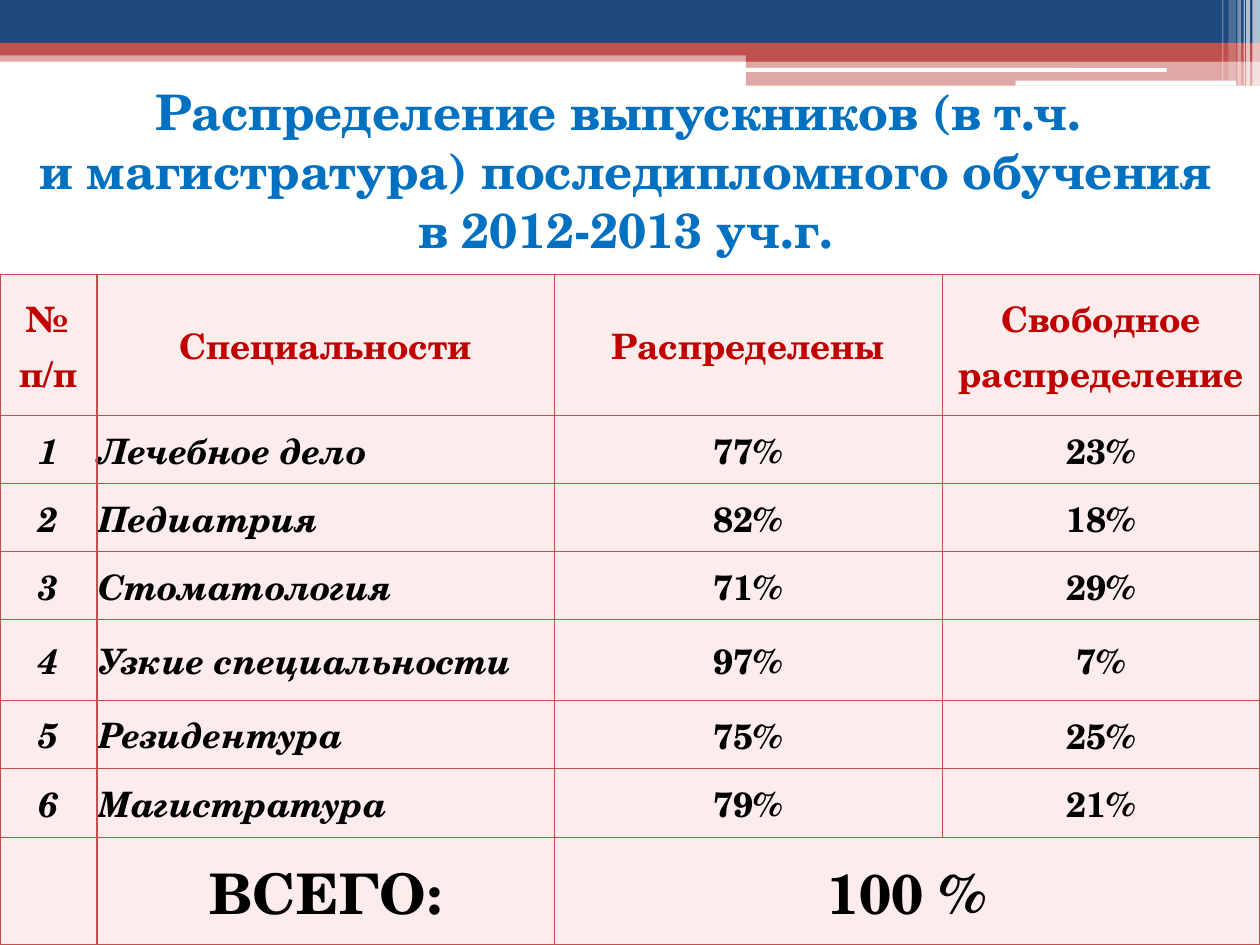
from dataclasses import dataclass

from lxml.etree import SubElement
from pptx import Presentation
from pptx.dml.color import RGBColor
from pptx.enum.shapes import MSO_SHAPE as Shape
from pptx.enum.text import MSO_ANCHOR as Anchor, MSO_AUTO_SIZE as AutoSize, PP_ALIGN as Align
from pptx.oxml.ns import qn
from pptx.util import Inches, Pt


@dataclass(frozen=True)
class Theme:
    font: str = "TeX Gyre Schola"
    navy: str = "1F497D"
    red: str = "C0504D"
    white: str = "FFFFFF"
    title: str = "0070C0"
    heading: str = "C00000"
    body: str = "000000"
    cell: str = "FDECEC"
    title_size: int = 28
    body_size: int = 20
    total_size: int = 32
    border: float = 0.75


THEME = Theme()
WIDTH, HEIGHT = 10, 7.5

# Header bands: left, top, width, height, colour, opacity in percent
BANDS = [
    (0, 0.4, WIDTH, 0.09, THEME.red, 50),
    (0, 0, WIDTH, 0.34, THEME.navy, 100),
    (0, 0.34, WIDTH, 0.1, THEME.red, 100),
    (5.92, 0.39, 4.08, 0.1, THEME.red, 100),
    (5.92, 0.48, 4.08, 0.2, THEME.red, 50),
]
# White rounded bars: left, top, width, height
BARS = [(5.91, 0.54, 3.35, 0.03), (8.06, 0.64, 1.75, 0.04)]
# Vertical stripes at the right edge: left, width, height, opacity
STRIPES = [
    (9.94, 0.06, 0.68, 65), (9.89, 0.03, 0.68, 65), (9.87, 0.01, 0.68, 60),
    (9.82, 0.03, 0.68, 40), (9.75, 0.06, 0.64, 20), (9.7, 0.01, 0.64, 30),
]

TITLE = ["Распределение выпускников (в т.ч. ",
         "и магистратура) последипломного обучения в 2012-2013 уч.г."]
HEADINGS = ["№ п/п", "Специальности", "Распределены", "Свободное распределение"]
SPECIALTIES = [
    ("Лечебное дело", 77, 23),
    ("Педиатрия", 82, 18),
    ("Стоматология", 71, 29),
    ("Узкие специальности", 97, 7),
    ("Резидентура", 75, 25),
    ("Магистратура", 79, 21),
]
TOTAL = ["", "ВСЕГО:", "100 %"]
COLUMNS = [0.77, 3.63, 3.08, 2.52]
ROWS = [1.12, 0.54, 0.54, 0.54, 0.64, 0.54, 0.55, 0.85]
TABLE_TOP = HEIGHT - sum(ROWS)


def add_block(page, left, top, width, height, color, opacity=100, kind=Shape.RECTANGLE):
    """Add a borderless block, translucent if asked."""
    block = page.shapes.add_shape(
        kind, Inches(left), Inches(top), Inches(width), Inches(height))
    block.shadow.inherit = False
    block.line.fill.background()
    block.fill.solid()
    block.fill.fore_color.rgb = RGBColor.from_string(color)
    if opacity < 100:
        tone = block.fill._xPr.find(qn("a:solidFill"))[0]
        SubElement(tone, qn("a:alpha"), val=str(opacity * 1000))
    return block


def add_text(para, text, size, color, italic=False, align=Align.CENTER):
    para.alignment = align
    span = para.add_run()
    span.text = text
    font = span.font
    font.name, font.size = THEME.font, Pt(size)
    font.bold, font.italic = True, italic
    font.color.rgb = RGBColor.from_string(color)


def add_header(page):
    for band in BANDS:
        add_block(page, *band)
    for bar in BARS:
        add_block(page, *bar, THEME.white, kind=Shape.ROUNDED_RECTANGLE)
    for left, width, height, opacity in STRIPES:
        add_block(page, left, 0, width, height, THEME.white, opacity)


def add_title(page):
    box = page.shapes.title
    box.left, box.top = Inches(0.12), Inches(0.6)
    box.width, box.height = Inches(9.69), Inches(1.51)
    page.shapes._spTree.append(box._element)  # in front of the header
    frame = box.text_frame
    frame.word_wrap = True
    frame.auto_size = AutoSize.NONE
    frame.vertical_anchor = Anchor.TOP
    for index, line in enumerate(TITLE):
        para = frame.add_paragraph() if index else frame.paragraphs[0]
        add_text(para, line, THEME.title_size, THEME.title)


def style_cell(cell):
    """Set margins, borders and fill; borders come before the fill in the XML."""
    cell.vertical_anchor = Anchor.MIDDLE
    cell.margin_left = cell.margin_right = cell.margin_top = Inches(0.01)
    cell.margin_bottom = 0
    props = cell._tc.get_or_add_tcPr()
    for side in "LRTB":
        line = SubElement(props, qn(f"a:ln{side}"), w=str(Pt(THEME.border)))
        fill = SubElement(line, qn("a:solidFill"))
        SubElement(fill, qn("a:srgbClr"), val=THEME.red)
    cell.fill.solid()
    cell.fill.fore_color.rgb = RGBColor.from_string(THEME.cell)


def fill_cell(cell, text, size=THEME.body_size, color=THEME.body, **style):
    add_text(cell.text_frame.paragraphs[0], text, size, color, **style)


def add_results(page):
    table = page.shapes.add_table(
        len(ROWS), len(COLUMNS), 0, Inches(TABLE_TOP),
        Inches(sum(COLUMNS)), Inches(sum(ROWS))).table
    for column, width in zip(table.columns, COLUMNS):
        column.width = Inches(width)
    for row, height in zip(table.rows, ROWS):
        row.height = Inches(height)
    for cell in table.iter_cells():
        style_cell(cell)

    # Headings
    for col, heading in enumerate(HEADINGS):
        fill_cell(table.cell(0, col), heading, color=THEME.heading)

    # One row per specialty
    for row, (name, assigned, free) in enumerate(SPECIALTIES, start=1):
        fill_cell(table.cell(row, 0), str(row), italic=True)
        fill_cell(table.cell(row, 1), name, italic=True, align=Align.LEFT)
        fill_cell(table.cell(row, 2), f"{assigned}%")
        fill_cell(table.cell(row, 3), f"{free}%")

    # Total, across the last two columns
    last = len(ROWS) - 1
    table.cell(last, 2).merge(table.cell(last, 3))
    for col, text in enumerate(TOTAL):
        if text:
            fill_cell(table.cell(last, col), text, THEME.total_size)


def main():
    deck = Presentation()
    deck.slide_width, deck.slide_height = Inches(WIDTH), Inches(HEIGHT)
    page = deck.slides.add_slide(deck.slide_layouts.get_by_name("Title Only"))
    add_header(page)
    add_results(page)
    add_title(page)
    deck.save("out.pptx")


if __name__ == "__main__":
    main()
